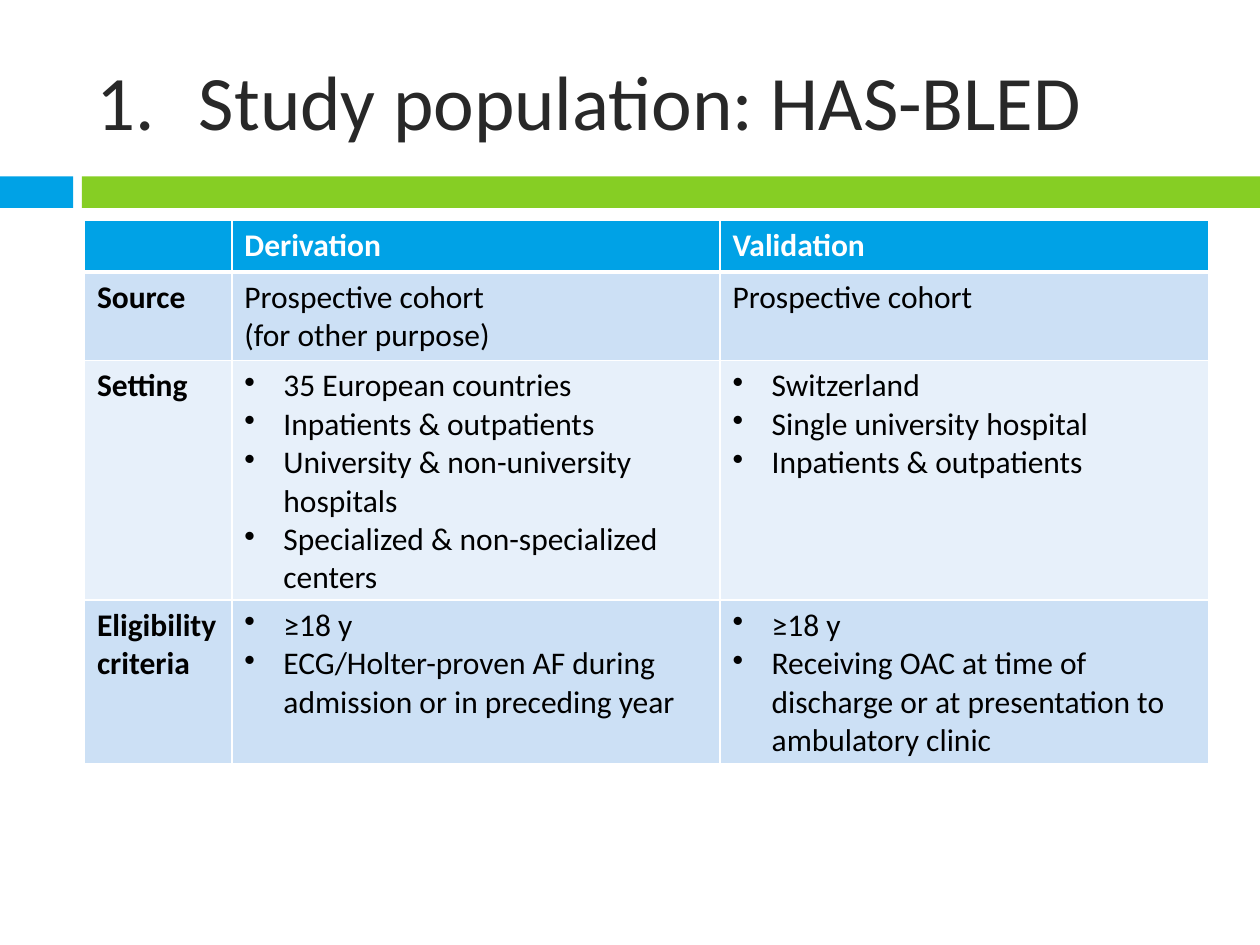
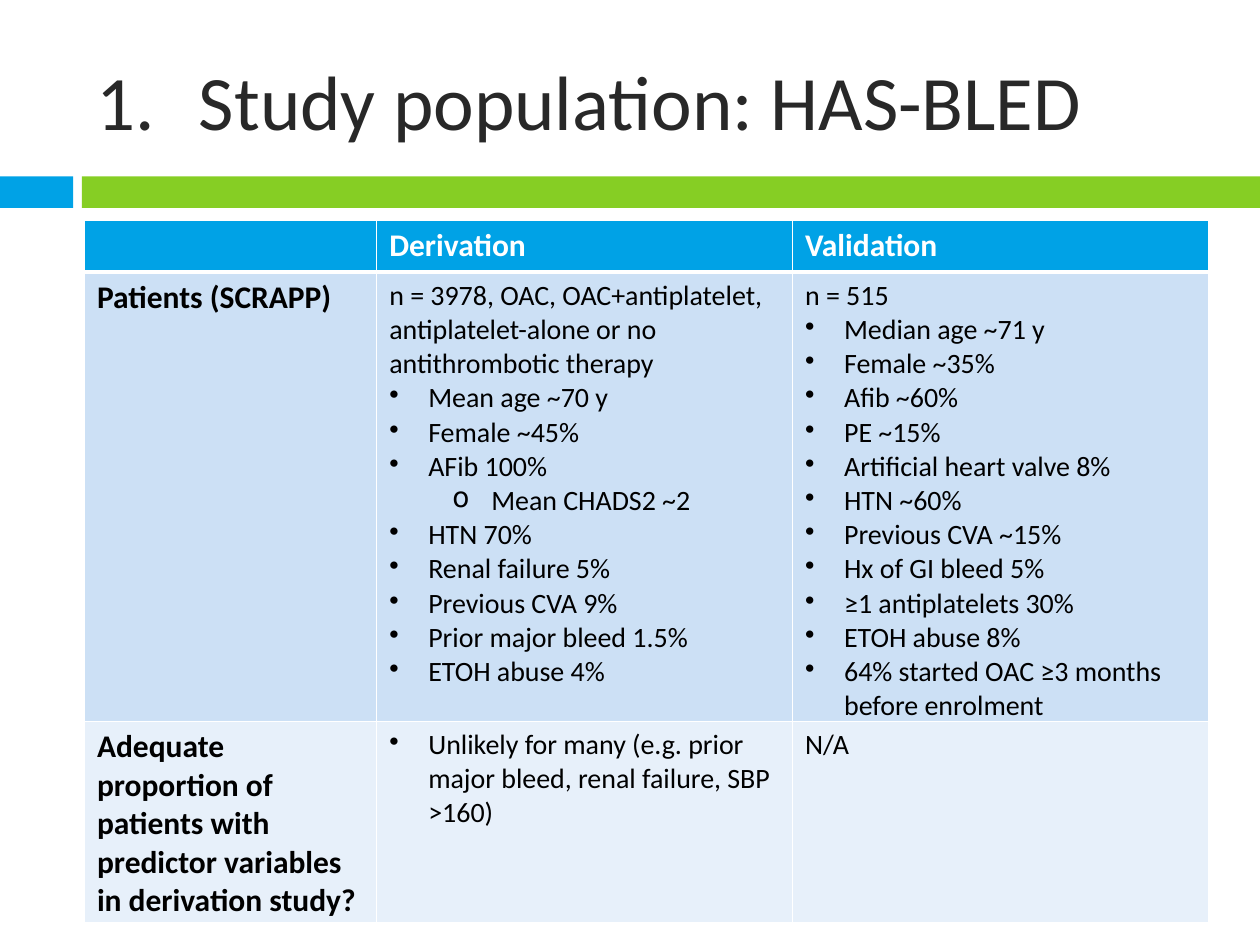
from lxml import etree
from pptx import Presentation
from pptx import util as u
from pptx.dml.color import RGBColor
from pptx.enum import shapes, text
from pptx.oxml import ns

BLUE = RGBColor(0x00, 0xA2, 0xE6)
GREEN = RGBColor(0x86, 0xCE, 0x24)
DARK = RGBColor(0x28, 0x28, 0x28)
BLACK = RGBColor(0x00, 0x00, 0x00)
WHITE = RGBColor(0xFF, 0xFF, 0xFF)
TINTS = [RGBColor(0xCC, 0xE0, 0xF5), RGBColor(0xE7, 0xF0, 0xFA)]

FONT = "Calibri"
LEFT, WIDE = 0.67, 8.92
ROW = 0.41
HANG = 0.31
# Left margin of a list line by its mark
LISTS = {"•": HANG, "o": 0.81}


def write(para, words, size=18, color=BLACK, bold=False):
    """Add one run to a paragraph with the given format."""
    run = para.add_run()
    run.text = words
    font = run.font
    font.name, font.size, font.bold = FONT, u.Pt(size), bold
    font.color.rgb = color


def mark(para, tag, margin, hang, **attrs):
    """Give a paragraph a hanging bullet or number."""
    props = para._p.get_or_add_pPr()
    props.set("marL", str(u.Inches(margin)))
    props.set("indent", str(-u.Inches(hang)))
    etree.SubElement(props, ns.qn("a:" + tag), **attrs)


def edge(cell, top=1, bottom=1):
    """Draw white borders round a cell; widths in points."""
    props = cell._tc.get_or_add_tcPr()
    sides = {"lnL": 1, "lnR": 1, "lnT": top, "lnB": bottom}
    for spot, (side, width) in enumerate(sides.items()):
        line = etree.Element(ns.qn("a:" + side), w=str(u.Pt(width)))
        fill = etree.SubElement(line, ns.qn("a:solidFill"))
        etree.SubElement(fill, ns.qn("a:srgbClr"), val=str(WHITE))
        props.insert(spot, line)


class Deck:
    def __init__(self):
        self.prs = Presentation()
        self.prs.slide_width = u.Inches(10)
        self.prs.slide_height = u.Inches(7.5)
        self.slide = None

    def page(self, title):
        """Start a slide with the shared bands and numbered title."""
        self.slide = self.prs.slides.add_slide(self.prs.slide_layouts[6])
        self.band(0, 0.58, BLUE)
        self.band(0.65, 9.35, GREEN)
        self.title(title)

    def band(self, left, width, color):
        bar = self.slide.shapes.add_shape(
            shapes.MSO_SHAPE.RECTANGLE, u.Inches(left), u.Inches(1.4),
            u.Inches(width), u.Inches(0.25))
        bar.shadow.inherit = False
        bar.fill.solid()
        bar.fill.fore_color.rgb = color
        bar.line.fill.background()

    def title(self, words):
        box = self.slide.shapes.add_textbox(
            u.Inches(LEFT), u.Inches(0.25), u.Inches(WIDE), u.Inches(1.08))
        frame = box.text_frame
        frame.word_wrap = True
        frame.vertical_anchor = text.MSO_ANCHOR.MIDDLE
        para = frame.paragraphs[0]
        mark(para, "buAutoNum", 0.81, 0.81, type="arabicPeriod")
        write(para, words, size=44, color=DARK)

    def cell(self, cell, lines, fill, **style):
        """Fill a cell; a line that starts with a list mark is indented."""
        cell.fill.solid()
        cell.fill.fore_color.rgb = fill
        for n, line in enumerate(lines):
            frame = cell.text_frame
            para = frame.add_paragraph() if n else frame.paragraphs[0]
            sign, _, rest = line.partition(" ")
            if sign in LISTS:
                para.level = list(LISTS).index(sign)
                mark(para, "buChar", LISTS[sign], HANG, char=sign)
                line = rest
            write(para, line, **style)

    def table(self, first, height, rows, size=18):
        """Compare derivation with validation; rows grow with their text."""
        rows = [("", ["Derivation"], ["Validation"])] + rows
        frame = self.slide.shapes.add_table(
            len(rows), 3, u.Inches(LEFT), u.Inches(1.75),
            u.Inches(WIDE), u.Inches(height))
        grid = frame.table
        rest = (WIDE - first) / 2
        for col, width in zip(grid.columns, (first, rest, rest)):
            col.width = u.Inches(width)
        for r, (label, *parts) in enumerate(rows):
            grid.rows[r].height = u.Inches(ROW)
            head = r == 0
            fill = BLUE if head else TINTS[(r - 1) % 2]
            color = WHITE if head else BLACK
            for c, lines in enumerate([[label] if label else [], *parts]):
                cell = grid.cell(r, c)
                bold = head or c == 0
                self.cell(cell, lines, fill, color=color, bold=bold,
                          size=18 if bold else size)
                edge(cell, top=3 if r == 1 else 1, bottom=3 if head else 1)
        frame.height = u.Inches(height)


def main():
    deck = Deck()
    topic = "Study population: HAS-BLED"

    # Source, setting and eligibility
    deck.page(topic)
    deck.table(1.17, 4.31, [
        ("Source",
         ["Prospective cohort", "(for other purpose)"],
         ["Prospective cohort"]),
        ("Setting",
         ["• 35 European countries",
          "• Inpatients & outpatients",
          "• University & non-university hospitals",
          "• Specialized & non-specialized centers"],
         ["• Switzerland",
          "• Single university hospital",
          "• Inpatients & outpatients"]),
        ("Eligibility criteria",
         ["• ≥18 y",
          "• ECG/Holter-proven AF during admission or in preceding year"],
         ["• ≥18 y",
          "• Receiving OAC at time of discharge or at presentation to "
          "ambulatory clinic"]),
    ])

    # Patients and predictors
    deck.page(topic)
    deck.table(2.32, 5.57, [
        ("Patients (SCRAPP)",
         ["n = 3978, OAC, OAC+antiplatelet, antiplatelet-alone or no "
          "antithrombotic therapy",
          "• Mean age ~70 y",
          "• Female ~45%",
          "• AFib 100%",
          "o Mean CHADS2 ~2",
          "• HTN 70%",
          "• Renal failure 5%",
          "• Previous CVA 9%",
          "• Prior major bleed 1.5%",
          "• ETOH abuse 4%"],
         ["n = 515",
          "• Median age ~71 y",
          "• Female ~35%",
          "• Afib ~60%",
          "• PE ~15%",
          "• Artificial heart valve 8%",
          "• HTN ~60%",
          "• Previous CVA ~15%",
          "• Hx of GI bleed 5%",
          "• ≥1 antiplatelets 30%",
          "• ETOH abuse 8%",
          "• 64% started OAC ≥3 months before enrolment"]),
        ("Adequate proportion of patients with predictor variables in "
         "derivation study?",
         ["• Unlikely for many (e.g. prior major bleed, renal failure, "
          "SBP >160)"],
         ["N/A"]),
    ], size=16)

    deck.prs.save("out.pptx")


if __name__ == "__main__":
    main()
